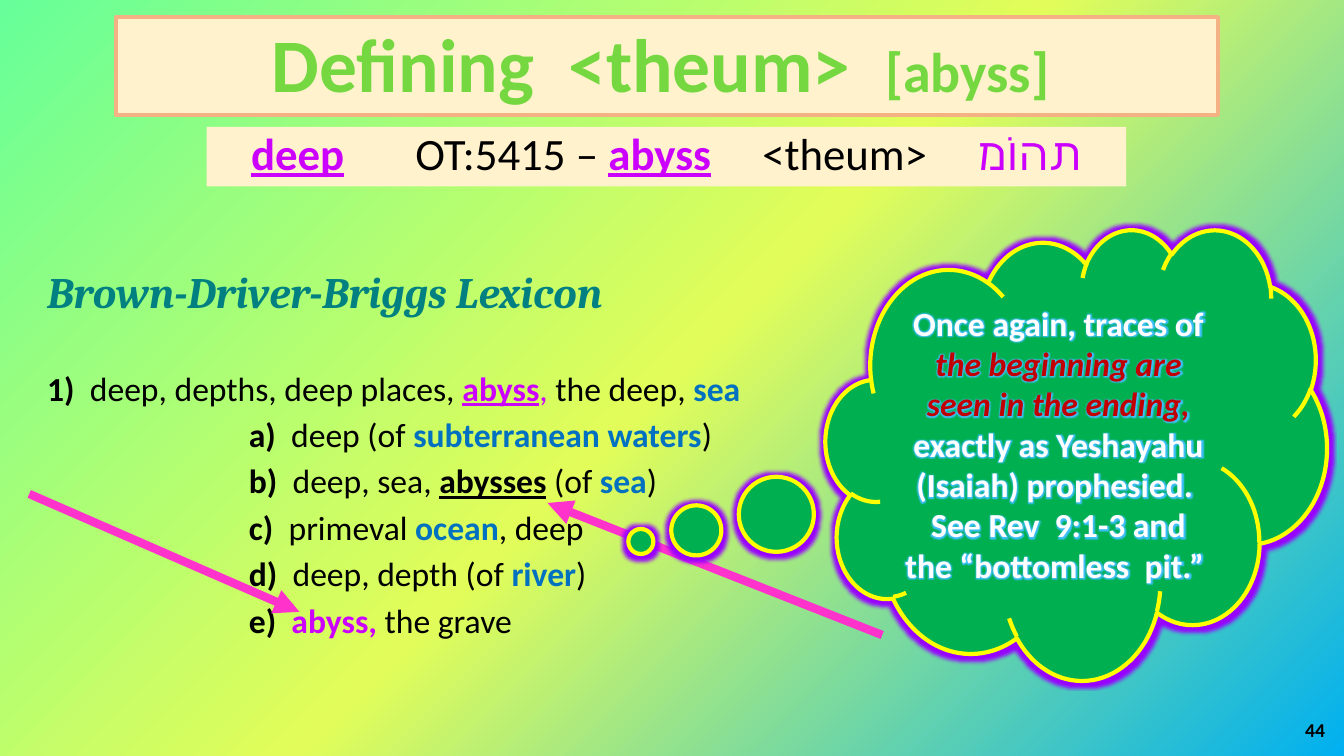
from lxml import etree
from pptx import Presentation
from pptx.dml.color import RGBColor
from pptx.enum.shapes import MSO_CONNECTOR, MSO_SHAPE
from pptx.enum.text import MSO_ANCHOR as ANCHOR, PP_ALIGN as ALIGN
from pptx.oxml import parse_xml
from pptx.oxml.ns import nsdecls, qn
from pptx.util import Inches, Pt

BLACK = RGBColor(0x00, 0x00, 0x00)
WHITE = RGBColor(0xFF, 0xFF, 0xFF)
TEAL = RGBColor(0x00, 0x80, 0x80)
VIOLET = RGBColor(0xCC, 0x00, 0xFF)
BLUE = RGBColor(0x00, 0x70, 0xC0)
PINK = RGBColor(0xFF, 0x33, 0xCC)
GREEN = RGBColor(0x00, 0xB0, 0x50)
LIME = RGBColor(0x75, 0xD8, 0x40)
YELLOW = RGBColor(0xFF, 0xFF, 0x00)
RED = RGBColor(0xC0, 0x00, 0x00)
CREAM = RGBColor(0xFF, 0xF2, 0xCC)
PEACH = RGBColor(0xF4, 0xB1, 0x83)
SKY = RGBColor(0x00, 0xB0, 0xF0)
LEMON = RGBColor(0xE2, 0xFD, 0x59)
MINT = RGBColor(0x66, 0xFF, 0x99)
PURPLE = RGBColor(0x99, 0x00, 0xFF)
PALE_BLUE = RGBColor(0x40, 0xC0, 0xFF)

BOLD = {"bold": True}
KEY = {"bold": True, "underline": True}
ABYSS = {"color": VIOLET, **KEY}
WATER = {"color": BLUE, "bold": True}

HEADING = [("Brown-Driver-Briggs Lexicon",
            {"name": "Cambria", "size": Pt(31), "color": TEAL, "bold": True, "italic": True})]
MEANING = [("1) ", BOLD), (" deep, depths, deep places, ", {}), ("abyss", ABYSS),
           (", ", {"color": VIOLET}), ("the deep, ", {}), ("sea", WATER)]
SENSES = [
    [("a)", BOLD), ("  deep (of ", {}), ("subterranean waters", WATER), (")", {})],
    [("b) ", BOLD), (" deep, sea, ", {}), ("abysses", KEY), (" (of ", {}), ("sea", WATER), (")", {})],
    [("c) ", BOLD), (" primeval ", {}), ("ocean", WATER), (", deep", {})],
    [("d) ", BOLD), (" deep, depth (of ", {}), ("river", WATER), (")", {})],
    [("e)  ", BOLD), ("abyss, ", {"color": VIOLET, "bold": True}), ("the grave", {})],
]
TITLE = [("Defining  <theum>  ", {"size": Pt(54)}), ("[abyss] ", {"size": Pt(40)})]
WORD = [("deep", ABYSS), ("\tOT:5415 – ", {}), ("abyss", ABYSS), ("\t<theum>\t", {}),
        ("תהוֹמ", {"color": VIOLET, "spacing": 150})]
THOUGHT = [
    [("Once again, traces of ", {}),
     ("the beginning are seen in the ending, ", {"color": RED, "italic": True}),
     ("exactly as Yeshayahu (Isaiah) prophesied. ", {})],
    [("See Rev  9:1-3 and the “bottomless  pit.” ", {})],
]


class SlideBuilder:
    def __init__(self, prs):
        self.s = prs.slides.add_slide(prs.slide_layouts[6])
        self.style = {"name": "Calibri", "size": Pt(24), "color": BLACK}

    def background(self, stops):
        fill = self.s.background.fill
        fill.gradient()
        grad = self.s._element.find(".//" + qn("a:gradFill"))
        stop_xml = "".join(f'<a:gs pos="{pos * 1000}"><a:srgbClr val="{color}"/></a:gs>'
                           for pos, color in stops)
        grad.getparent().replace(grad, parse_xml(
            f'<a:gradFill {nsdecls("a")} rotWithShape="1"><a:gsLst>{stop_xml}</a:gsLst>'
            '<a:path path="circle"><a:fillToRect l="100000" t="100000"/></a:path></a:gradFill>'))

    def glow(self, color, radius):
        return parse_xml(f'<a:effectLst {nsdecls("a")}><a:glow rad="{Pt(radius)}">'
                         f'<a:srgbClr val="{color}"/></a:glow></a:effectLst>')

    def paragraph(self, tf, runs, fmt=None, **base):
        p = tf.paragraphs[0] if not tf.paragraphs[0].runs else tf.add_paragraph()
        for name, value in (fmt or {}).items():
            setattr(p, name, value)
        for text, look in runs:
            r = p.add_run()
            r.text = text
            look = {**self.style, **base, **look}
            r.font.color.rgb = look.pop("color")
            glow = look.pop("glow", None)
            if "spacing" in look:
                r.font._element.set("spc", str(look.pop("spacing")))
            for name, value in look.items():
                setattr(r.font, name, value)
            if glow:
                r.font._element.find(qn("a:solidFill")).addnext(self.glow(*glow))
        return p

    def frame(self, sp, **fmt):
        tf = sp.text_frame
        for name, value in {"word_wrap": True, "vertical_anchor": ANCHOR.TOP, **fmt}.items():
            setattr(tf, name, value)
        return tf

    def text(self, box, **fmt):
        return self.frame(self.s.shapes.add_textbox(*map(Inches, box)), **fmt)

    def shape(self, kind, box, fill, line=None, adjustments=(), glow=None, **fmt):
        sp = self.s.shapes.add_shape(kind, *map(Inches, box))
        sp.shadow.inherit = False
        for i, value in enumerate(adjustments):
            sp.adjustments[i] = value
        sp.fill.solid()
        sp.fill.fore_color.rgb = fill
        if line:
            sp.line.color.rgb = line
            sp.line.width = Pt(3)
        else:
            sp.line.fill.background()
        if glow:
            effects = sp._element.spPr.find(qn("a:effectLst"))
            effects.getparent().replace(effects, self.glow(*glow))
        return self.frame(sp, **fmt)

    def arrow(self, start, end):
        cn = self.s.shapes.add_connector(MSO_CONNECTOR.STRAIGHT, *map(Inches, start + end))
        cn.line.color.rgb = PINK
        cn.line.width = Pt(6)
        etree.SubElement(cn.line._get_or_add_ln(), qn("a:tailEnd"), type="triangle")
        etree.SubElement(cn._element.spPr, qn("a:effectLst"))


def main():
    prs = Presentation()
    prs.slide_width, prs.slide_height = Inches(13.33), Inches(7.5)
    b = SlideBuilder(prs)
    b.background([(0, SKY), (50, LEMON), (100, MINT)])

    tf = b.text((0.37, 2.5, 12.55, 4.2))
    b.paragraph(tf, HEADING, {"line_spacing": 1.15, "space_after": Pt(32)}).runs[0]
    b.paragraph(tf, MEANING, {"line_spacing": 1.15})
    for sense in SENSES:
        p = b.paragraph(tf, sense, {"line_spacing": 1.15})
        p._p.get_or_add_pPr().set("marL", str(Inches(2)))

    b.arrow((0.29, 4.9), (2.97, 6.07))
    b.arrow((8.75, 6.3), (5.43, 4.99))

    tf = b.shape(MSO_SHAPE.CLOUD_CALLOUT, (8.19, 2.27, 4.97, 4.47), GREEN, YELLOW,
                 (-0.869, 0.194), (PURPLE, 5), vertical_anchor=ANCHOR.MIDDLE)
    for runs in THOUGHT:
        b.paragraph(tf, runs, {"alignment": ALIGN.CENTER}, color=WHITE, bold=True,
                    glow=(PALE_BLUE, 5))

    tf = b.text((10.24, 7.04, 3, 0.4), vertical_anchor=ANCHOR.MIDDLE)
    b.paragraph(tf, [("44", BOLD)], {"alignment": ALIGN.RIGHT}, size=Pt(14))

    tf = b.shape(MSO_SHAPE.RECTANGLE, (1.15, 0.17, 10.93, 0.97), CREAM, PEACH,
                 margin_left=Inches(0.2), margin_right=Inches(0.2),
                 margin_top=Inches(0.1), margin_bottom=Inches(0.1))
    b.paragraph(tf, TITLE, {"alignment": ALIGN.CENTER, "line_spacing": 0.9},
                color=LIME, bold=True)

    tf = b.shape(MSO_SHAPE.RECTANGLE, (2.05, 1.26, 9.12, 0.59), CREAM, margin_left=Inches(0.44))
    p = b.paragraph(tf, WORD, {"alignment": ALIGN.LEFT, "line_spacing": 0.9}, size=Pt(32))
    tabs = etree.SubElement(p._p.get_or_add_pPr(), qn("a:tabLst"))
    for stop in (1.63, 5.07, 7.21):
        etree.SubElement(tabs, qn("a:tab"), pos=str(Inches(stop)), algn="l")

    prs.save("out.pptx")


if __name__ == "__main__":
    main()
